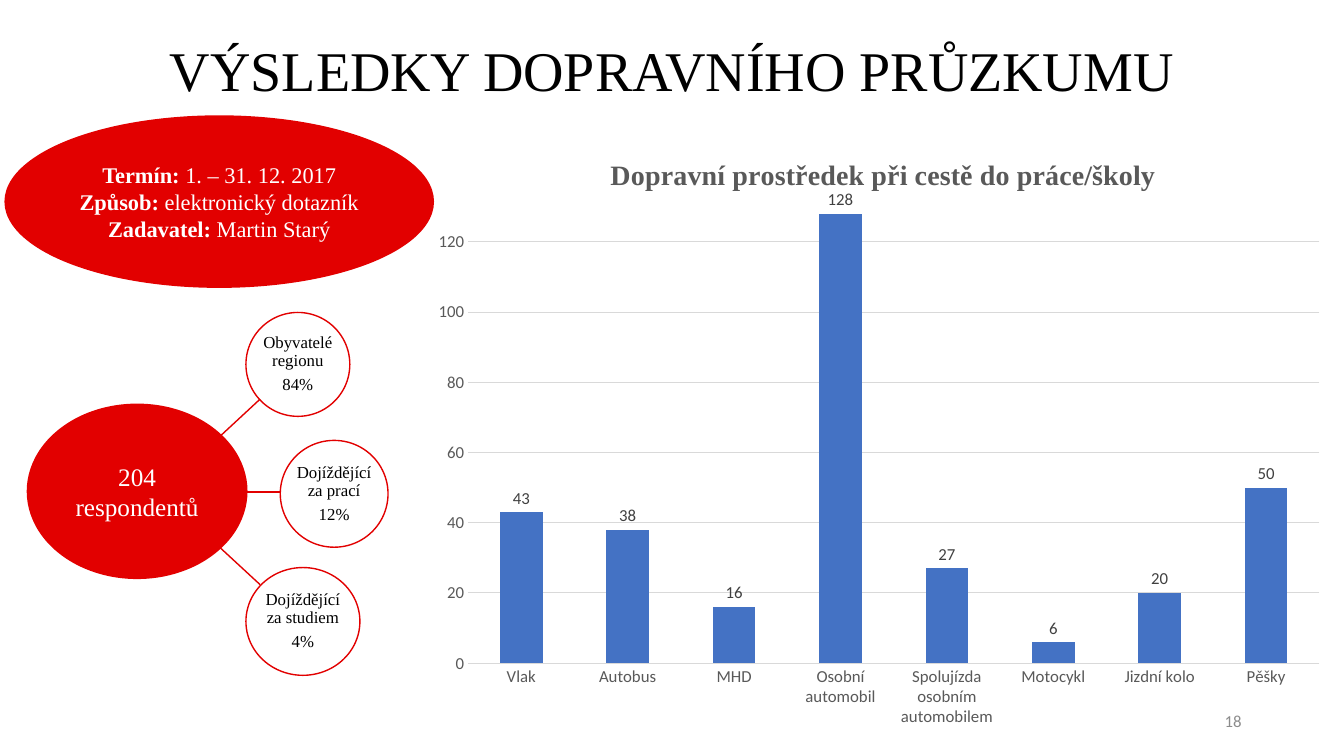
from lxml import etree
from pptx import Presentation
from pptx.chart.data import CategoryChartData
from pptx.dml.color import RGBColor
from pptx.enum.chart import XL_CHART_TYPE as ChartType, XL_LABEL_POSITION as LabelPosition
from pptx.enum.chart import XL_TICK_MARK as TickMark
from pptx.enum.shapes import MSO_CONNECTOR as Connector, MSO_SHAPE as Shape
from pptx.enum.text import MSO_ANCHOR as Anchor, PP_ALIGN as Align
from pptx.oxml import parse_xml
from pptx.oxml.ns import nsdecls, qn
from pptx.util import Pt

RED = RGBColor(0xE2, 0x00, 0x00)
BLUE = RGBColor(0x44, 0x72, 0xC4)
WHITE = RGBColor(0xFF, 0xFF, 0xFF)
BLACK = RGBColor(0x00, 0x00, 0x00)
TEXT_GRAY = RGBColor(0x59, 0x59, 0x59)
LABEL_GRAY = RGBColor(0x40, 0x40, 0x40)
NUMBER_GRAY = RGBColor(0x8C, 0x8C, 0x8C)
GRID_GRAY = RGBColor(0xD9, 0xD9, 0xD9)
SERIF = "Times New Roman"
SANS = "Calibri"

TRANSPORT = {
    "Vlak": 43, "Autobus": 38, "MHD": 16, "Osobní automobil": 128,
    "Spolujízda osobním automobilem": 27, "Motocykl": 6,
    "Jizdní kolo": 20, "Pěšky": 50,
}
SURVEY = [
    [("Termín: ", True), ("1. – 31. 12. 2017", False)],
    [("Způsob: ", True), ("elektronický dotazník", False)],
    [("Zadavatel: ", True), ("Martin Starý", False)],
]
# Group, share, circle box, connector start and end
GROUPS = [
    ("Obyvatelé regionu", "84%", (175.7, 223.2, 74.2, 74.2), (157, 311.8, 185.8, 285.1)),
    ("Dojíždějící za prací", "12%", (200.2, 314.6, 77, 76.3), (157, 351.4, 200.2, 351.4)),
    ("Dojíždějící za studiem", "4%", (175.7, 405.4, 81.4, 77), (157, 391, 185.8, 417.6)),
]


def set_font(font, **values):
    color = values.pop("color")
    for name, value in values.items():
        setattr(font, name, value)
    font.color.rgb = color


def write_text(shape, paragraphs, paragraph_format, font_format):
    """Fill a shape with paragraphs, each a list of (text, bold) runs."""
    frame = shape.text_frame
    frame.word_wrap = True
    frame.vertical_anchor = Anchor.MIDDLE
    for index, runs in enumerate(paragraphs):
        paragraph = frame.add_paragraph() if index else frame.paragraphs[0]
        for name, value in paragraph_format.items():
            setattr(paragraph, name, value)
        for text, bold in runs:
            run = paragraph.add_run()
            run.text = text
            set_font(run.font, bold=bold, **font_format)


def add_text(slide, box, text, paragraph_format, font_format):
    shape = slide.shapes.add_textbox(*map(Pt, box))
    write_text(shape, [[(text, False)]], paragraph_format, font_format)


def add_ellipse(slide, box, fill, line_width):
    shape = slide.shapes.add_shape(Shape.OVAL, *map(Pt, box))
    shape.shadow.inherit = False
    if fill is None:
        shape.fill.background()
    else:
        shape.fill.solid()
        shape.fill.fore_color.rgb = fill
    shape.line.color.rgb = RED
    shape.line.width = Pt(line_width)
    return shape


def add_red_ellipse(slide, box, paragraphs, size):
    shape = add_ellipse(slide, box, RED, 2.25)
    write_text(shape, paragraphs, {"alignment": Align.CENTER},
               {"name": SERIF, "size": Pt(size), "color": WHITE})


def add_group_circle(slide, box, group, share):
    shape = add_ellipse(slide, box, None, 1)
    for side in ("left", "top", "right", "bottom"):
        setattr(shape.text_frame, f"margin_{side}", 0)
    write_text(shape, [[(group, False)], [(share, False)]],
               {"alignment": Align.CENTER, "line_spacing": 0.9, "space_after": Pt(4.2)},
               {"name": SERIF, "size": Pt(12), "color": BLACK})


def add_line(slide, ends):
    line = slide.shapes.add_connector(Connector.STRAIGHT, *map(Pt, ends))
    line.line.color.rgb = RED
    line.line.width = Pt(1)
    properties = line.element.find(qn("p:spPr"))
    etree.SubElement(properties, qn("a:effectLst"))


def manual_layout(**values):
    """Return a chart layout element with places as fractions of the chart."""
    settings = {"xMode": "edge", "yMode": "edge", **values}
    if "w" in values:
        settings = {"layoutTarget": "inner", **settings}
    children = "".join(f'<c:{name} val="{value}"/>' for name, value in settings.items())
    return parse_xml(f'<c:layout {nsdecls("c")}><c:manualLayout>{children}'
                     "</c:manualLayout></c:layout>")


def place(element, layout, position):
    for old_layout in element.findall(qn("c:layout")):
        element.remove(old_layout)
    element.insert(position, layout)


def style_axes(chart):
    for axis in (chart.category_axis, chart.value_axis):
        axis.major_tick_mark = axis.minor_tick_mark = TickMark.NONE
        set_font(axis.tick_labels.font, name=SANS, size=Pt(12), color=TEXT_GRAY)
    values = chart.value_axis
    scale = {"minimum_scale": 0, "maximum_scale": 130, "major_unit": 20,
             "has_major_gridlines": True}
    for name, value in scale.items():
        setattr(values, name, value)
    values.format.line.fill.background()
    for line in (chart.category_axis.format.line, values.major_gridlines.format.line):
        line.color.rgb = GRID_GRAY
        line.width = Pt(0.75)


def add_transport_chart(slide):
    data = CategoryChartData()
    data.categories = list(TRANSPORT)
    data.add_series("Series 1", list(TRANSPORT.values()))
    frame = slide.shapes.add_chart(
        ChartType.COLUMN_CLUSTERED, *map(Pt, (301.7, 95.8, 653.8, 432)), data)
    chart = frame.chart
    chart.has_legend = False
    set_font(chart.font, name=SANS, size=Pt(10), color=BLACK)

    chart.has_title = True
    title_frame = chart.chart_title.text_frame
    title_frame.text = "Dopravní prostředek při cestě do práce/školy"
    set_font(title_frame.paragraphs[0].runs[0].font,
             name=SERIF, size=Pt(20), bold=True, color=TEXT_GRAY)
    title = chart.chart_title._element
    place(title, manual_layout(x=0.2, y=0.03), 1)
    place(chart.element.find(".//" + qn("c:plotArea")),
          manual_layout(x=0.05, y=0.12, w=0.93, h=0.755), 0)

    style_axes(chart)
    plot = chart.plots[0]
    plot.gap_width = 150
    plot.vary_by_categories = False
    series = plot.series[0]
    series.format.fill.solid()
    series.format.fill.fore_color.rgb = BLUE
    labels = series.data_labels
    labels.show_value = True
    labels.position = LabelPosition.OUTSIDE_END
    set_font(labels.font, name=SANS, size=Pt(12), color=LABEL_GRAY)


def main():
    presentation = Presentation()
    presentation.slide_width = Pt(960)
    presentation.slide_height = Pt(540)
    slide = presentation.slides.add_slide(presentation.slide_layouts[6])

    add_transport_chart(slide)
    add_text(slide, (66, 0, 828, 104.4), "VÝSLEDKY DOPRAVNÍHO PRŮZKUMU",
             {"alignment": Align.CENTER, "line_spacing": 0.9},
             {"name": SERIF, "size": Pt(40), "color": BLACK})
    for *_, ends in GROUPS:
        add_line(slide, ends)
    add_red_ellipse(slide, (20.2, 289.4, 155.5, 123.1), [[("204 respondentů", False)]], 18)
    for group, share, box, _ in GROUPS:
        add_group_circle(slide, box, group, share)
    add_red_ellipse(slide, (4.3, 83.5, 304.6, 121), SURVEY, 16)
    add_text(slide, (678, 500.5, 216, 28.8), "18", {"alignment": Align.RIGHT},
             {"name": SANS, "size": Pt(12), "color": NUMBER_GRAY})

    presentation.save("out.pptx")


if __name__ == "__main__":
    main()
